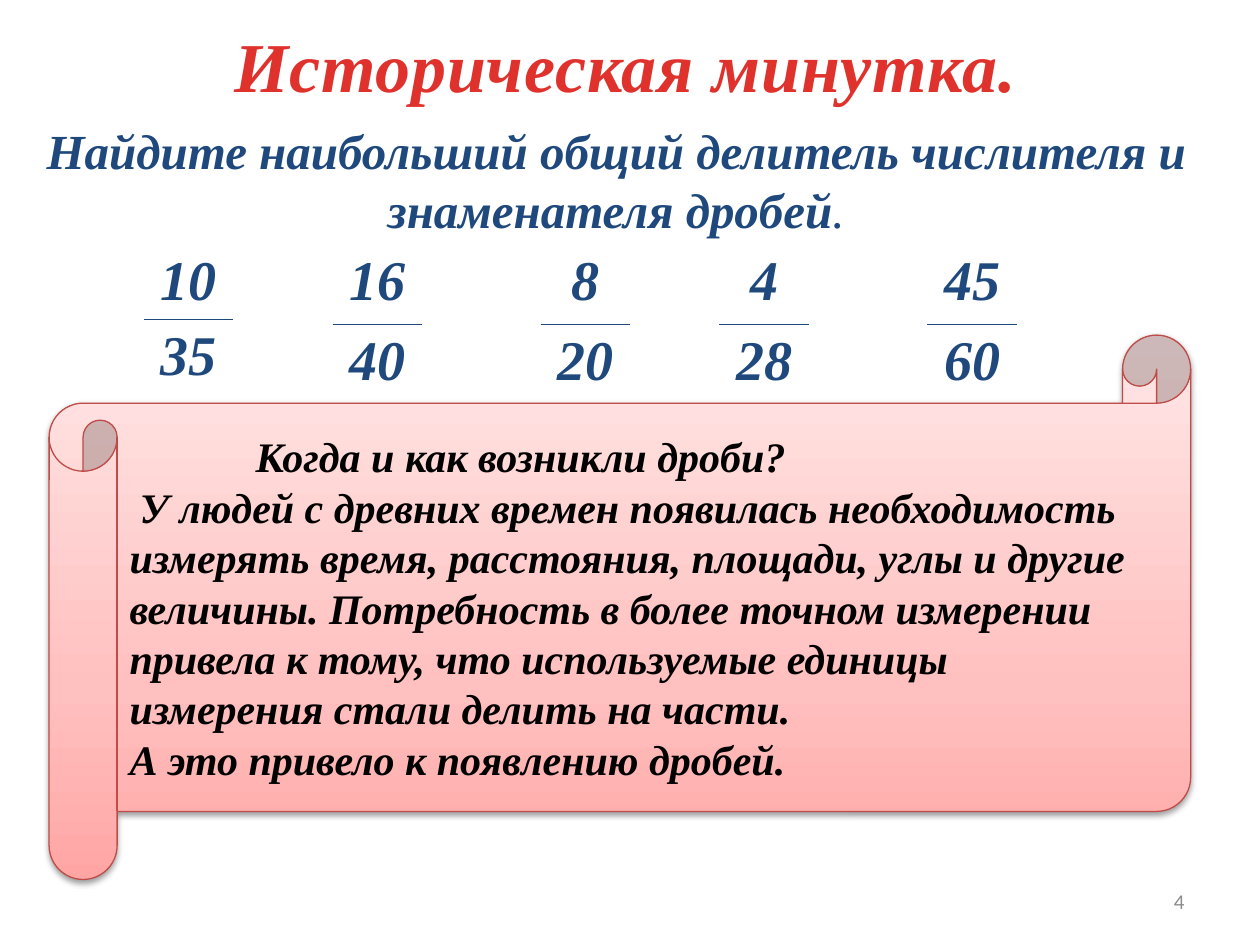
from lxml import etree
from pptx import Presentation
from pptx.dml.color import RGBColor
from pptx.enum.shapes import MSO_SHAPE
from pptx.enum.text import MSO_ANCHOR, MSO_AUTO_SIZE, PP_ALIGN
from pptx.oxml.ns import qn
from pptx.util import Inches, Pt

LEFT, CENTER, RIGHT = PP_ALIGN.LEFT, PP_ALIGN.CENTER, PP_ALIGN.RIGHT
TOP, MIDDLE = MSO_ANCHOR.TOP, MSO_ANCHOR.MIDDLE
GROW = MSO_AUTO_SIZE.SHAPE_TO_FIT_TEXT
SCROLL = MSO_SHAPE.HORIZONTAL_SCROLL

NAVY = "1F497D"
NO_STYLE_NO_GRID = "{2D5ABB26-0587-4C30-8999-92F81FD0307C}"
SERIF = {"name": "Times New Roman", "bold": True, "italic": True}
TASK = SERIF | {"size": Pt(28)}
STORY = SERIF | {"size": Pt(24)}
DIGITS = SERIF | {"size": Pt(32)}

# left edge, numerator, denominator, row height, bottom margin of the cells
FRACTIONS = [
    (1.14, "10", "35", 0.59, 0.01),
    (2.64, "16", "40", 0.63, 0.05),
    (4.29, "8", "20", 0.63, 0.05),
    (5.71, "4", "28", 0.63, 0.05),
    (7.36, "45", "60", 0.63, 0.05),
]
# first-line indent in inches, text
STORY_PARAGRAPHS = [
    (1, "Когда и как возникли дроби?"),
    (0.08, "У людей с древних времен появилась необходимость измерять время, "
           "расстояния, площади, углы и другие величины. Потребность в более "
           "точном измерении привела к тому, что используемые единицы измерения "
           "стали делить на части.\vА это привело к появлению дробей."),
]


def rgb(value):
    return RGBColor.from_string(value)


def set_attributes(target, values):
    for name, value in values.items():
        setattr(target, name, value)


def format_spans(para, color, values):
    for span in para.runs:
        set_attributes(span.font, values)
        span.font.color.rgb = rgb(color)


def add_child(parent, tag, **attributes):
    child = etree.SubElement(parent, qn(tag))
    for name, value in attributes.items():
        child.set(name, str(value))
    return child


def set_gradient(fill, stops, angle):
    """Fill with (percent, colour) stops; the angle is clockwise in degrees."""
    fill.gradient()
    fill.gradient_angle = -angle % 360
    stop_list = fill._xPr.find(qn("a:gradFill")).find(qn("a:gsLst"))
    for old_stop in list(stop_list):
        stop_list.remove(old_stop)
    for percent, color in stops:
        stop = add_child(stop_list, "a:gs", pos=percent * 1000)
        add_child(stop, "a:srgbClr", val=color)


def set_shadow(shape, color, percent, blur, distance):
    """Drop a shadow straight down; blur and distance are in points."""
    shape.shadow.inherit = False
    effects = shape._element.spPr.find(qn("a:effectLst"))
    shadow = add_child(effects, "a:outerShdw", blurRad=Pt(blur), dist=Pt(distance),
                       dir=90 * 60000, rotWithShape=0)
    tint = add_child(shadow, "a:srgbClr", val=color)
    add_child(tint, "a:alpha", val=percent * 1000)


def add_title(page, text):
    title = page.shapes.title
    set_attributes(title, {"left": Inches(1.76), "top": Inches(0.13),
                           "width": Inches(6.49), "height": Inches(0.77)})
    frame = title.text_frame
    frame.text = text
    set_attributes(frame, {"word_wrap": False, "auto_size": GROW,
                           "vertical_anchor": TOP})
    para = frame.paragraphs[0]
    para.alignment = LEFT
    font = para.runs[0].font
    set_attributes(font, SERIF | {"size": Pt(40)})
    set_gradient(font.fill, [(25, "E0322D"), (100, "A2201C")], 90)
    font._element.set("spc", "50")


def add_text_box(page, position, alignment, anchor):
    box = page.shapes.add_textbox(*map(Inches, position))
    box.text_frame.word_wrap = True
    box.text_frame.vertical_anchor = anchor
    para = box.text_frame.paragraphs[0]
    para.alignment = alignment
    return box, para


def add_task(page):
    box, para = add_text_box(page, (0.2, 0.91, 9.38, 1.04), CENTER, TOP)
    box.text_frame.auto_size = GROW
    para.add_run().text = ("Найдите наибольший общий делитель числителя "
                           "и знаменателя дробей")
    para.add_run().text = "."
    format_spans(para, NAVY, TASK)
    para.runs[1].font.bold = False


def add_scroll(page):
    scroll = page.shapes.add_shape(SCROLL, *map(Inches, (0.39, 2.66, 9.06, 4.32)))
    set_gradient(scroll.fill, [(0, "FFA6A5"), (35, "FFC0BF"), (100, "FFE7E7")], 270)
    scroll.line.color.rgb = rgb("BF4C48")
    scroll.line.width = Pt(0.75)
    set_shadow(scroll, "000000", 38, 3.1, 1.6)
    frame = scroll.text_frame
    frame.word_wrap = True
    frame.vertical_anchor = MIDDLE
    for number, (indent, text) in enumerate(STORY_PARAGRAPHS):
        para = frame.add_paragraph() if number else frame.paragraphs[0]
        para.text = text
        para.alignment = LEFT
        para._p.get_or_add_pPr().set("indent", str(Inches(indent)))
        format_spans(para, "000000", STORY)


def set_border(cell, tag):
    border = etree.Element(qn(tag), w=str(Pt(1)))
    add_child(add_child(border, "a:solidFill"), "a:srgbClr", val=NAVY)
    cell._tc.get_or_add_tcPr().insert(0, border)


def add_fraction(page, left, numerator, denominator, row_height, bottom_margin):
    """Write a fraction as a two-row table whose inner border is the bar."""
    table = page.shapes.add_table(2, 1, Inches(left), Inches(1.94), Inches(0.71),
                                  Inches(2 * row_height)).table
    set_attributes(table, {"first_row": False, "horz_banding": False})
    table._tbl.tblPr.find(qn("a:tableStyleId")).text = NO_STYLE_NO_GRID
    for row, (text, side) in enumerate([(numerator, "a:lnB"), (denominator, "a:lnT")]):
        cell = table.cell(row, 0)
        cell.text = text
        cell.margin_bottom = Inches(bottom_margin)
        cell.fill.background()
        set_border(cell, side)
        para = cell.text_frame.paragraphs[0]
        para.alignment = CENTER
        format_spans(para, NAVY, DIGITS)


def add_page_number(page, number):
    para = add_text_box(page, (7.17, 6.95, 2.33, 0.4), RIGHT, MIDDLE)[1]
    para.text = number
    format_spans(para, "8C8C8C", {"name": "Calibri", "size": Pt(12)})


def main():
    deck = Presentation()
    deck.slide_width, deck.slide_height = Inches(10), Inches(7.5)
    page = deck.slides.add_slide(deck.slide_layouts[5])
    add_task(page)
    add_scroll(page)
    add_title(page, "Историческая минутка.")
    add_page_number(page, "4")
    for fraction in FRACTIONS:
        add_fraction(page, *fraction)
    deck.save("out.pptx")


if __name__ == "__main__":
    main()
